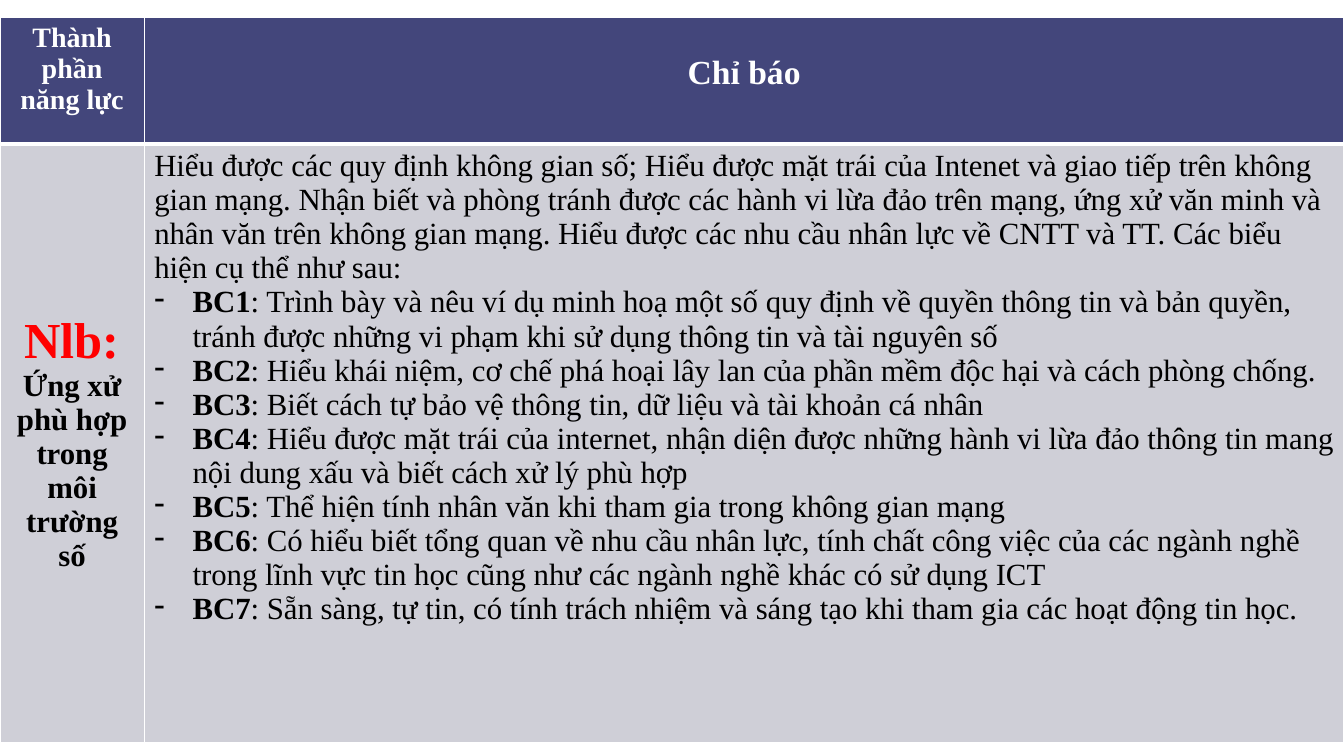
from dataclasses import dataclass

from lxml import etree
from pptx import Presentation
from pptx.dml.color import RGBColor
from pptx.enum.text import MSO_ANCHOR, PP_ALIGN
from pptx.oxml.ns import qn
from pptx.table import _Cell
from pptx.text.text import _Paragraph
from pptx.util import Inches, Pt

CENTER, LEFT = PP_ALIGN.CENTER, PP_ALIGN.LEFT
TOP, MIDDLE = MSO_ANCHOR.TOP, MSO_ANCHOR.MIDDLE


@dataclass(frozen=True)
class Theme:
    font: str = "Times New Roman"
    white: str = "FFFFFF"
    black: str = "000000"
    red: str = "FF0000"
    header_fill: str = "43467B"
    body_fill: str = "CFCFD7"
    label_size: int = 20
    body_size: int = 22
    title_size: int = 24
    code_size: int = 36
    thin: int = 1
    thick: int = 3


@dataclass(frozen=True)
class Indicator:
    code: str
    text: str


T = Theme()
COL_WIDTHS = (1.43, 11.9)
ROW_HEIGHTS = (1.26, 5.94)
HANG = 0.38

INTRO = (
    "Hiểu được các quy định không gian số; Hiểu được mặt trái của Intenet và giao tiếp "
    "trên không gian mạng. Nhận biết và phòng tránh được các hành vi lừa đảo trên mạng, "
    "ứng xử văn minh và nhân văn trên không gian mạng. Hiểu được các nhu cầu nhân lực về "
    "CNTT và TT. Các biểu hiện cụ thể như sau:"
)
INDICATORS = (
    Indicator("BC1", "Trình bày và nêu ví dụ minh hoạ một số quy định về quyền thông tin và "
              "bản quyền, tránh được những vi phạm khi sử dụng thông tin và tài nguyên số"),
    Indicator("BC2", "Hiểu khái niệm, cơ chế phá hoại lây lan của phần mềm độc hại và "
              "cách phòng chống."),
    Indicator("BC3", "Biết cách tự bảo vệ thông tin, dữ liệu và tài khoản cá nhân"),
    Indicator("BC4", "Hiểu được mặt trái của internet, nhận diện được những hành vi lừa đảo "
              "thông tin mang nội dung xấu và biết cách xử lý phù hợp"),
    Indicator("BC5", "Thể hiện tính nhân văn khi tham gia trong không gian mạng"),
    Indicator("BC6", "Có hiểu biết tổng quan về nhu cầu nhân lực, tính chất công việc của các "
              "ngành nghề trong lĩnh vực tin học cũng như các ngành nghề khác có sử dụng ICT"),
    Indicator("BC7", "Sẵn sàng, tự tin, có tính trách nhiệm và sáng tạo khi tham gia các "
              "hoạt động tin học."),
)


def add_text(p: _Paragraph, text: str, *, size: int = T.body_size, color: str = T.black,
             bold: bool = False, align: PP_ALIGN = LEFT) -> None:
    """Append a formatted run to a paragraph."""
    p.alignment = align
    r = p.add_run()
    r.text = text
    r.font.name = T.font
    r.font.size = Pt(size)
    r.font.bold = bold
    r.font.color.rgb = RGBColor.from_string(color)


def add_dash(p: _Paragraph) -> None:
    """Give a paragraph a dash bullet with a hanging indent."""
    pPr = p._p.get_or_add_pPr()
    pPr.set("marL", str(Inches(HANG)))
    pPr.set("indent", str(Inches(-HANG)))
    etree.SubElement(pPr, qn("a:buChar"), char="-")


def style_cell(cell: _Cell, fill: str, top: int, bottom: int,
               anchor: MSO_ANCHOR = TOP) -> None:
    """Set the borders, fill and anchor of a cell."""
    tcPr = cell._tc.get_or_add_tcPr()
    for side, width in (("L", T.thin), ("R", T.thin), ("T", top), ("B", bottom)):
        ln = etree.SubElement(tcPr, qn(f"a:ln{side}"), w=str(Pt(width)))
        solid = etree.SubElement(ln, qn("a:solidFill"))
        etree.SubElement(solid, qn("a:srgbClr"), val=T.white)
    cell.fill.solid()
    cell.fill.fore_color.rgb = RGBColor.from_string(fill)
    cell.vertical_anchor = anchor


def main() -> None:
    prs = Presentation()
    prs.slide_width, prs.slide_height = Inches(13.33), Inches(7.5)
    s = prs.slides.add_slide(prs.slide_layouts[6])

    # Table grid
    table = s.shapes.add_table(2, 2, Inches(0), Inches(0.17), Inches(sum(COL_WIDTHS)),
                               Inches(sum(ROW_HEIGHTS))).table
    for col, width in zip(table.columns, COL_WIDTHS):
        col.width = Inches(width)
    for row, height in zip(table.rows, ROW_HEIGHTS):
        row.height = Inches(height)
    head_label, head_title = table.rows[0].cells
    skill, details = table.rows[1].cells

    # Header row
    for cell in (head_label, head_title):
        style_cell(cell, T.header_fill, T.thin, T.thick)
    add_text(head_label.text_frame.paragraphs[0], "Thành phần năng lực",
             size=T.label_size, color=T.white, bold=True, align=CENTER)
    head_title.margin_top = Inches(0.37)
    add_text(head_title.text_frame.paragraphs[0], "Chỉ báo",
             size=T.title_size, color=T.white, bold=True, align=CENTER)

    # Competency name
    style_cell(skill, T.body_fill, T.thick, T.thin, MIDDLE)
    tf = skill.text_frame
    add_text(tf.paragraphs[0], "Nlb:", size=T.code_size, color=T.red, bold=True, align=CENTER)
    add_text(tf.add_paragraph(), "Ứng xử phù hợp trong môi trường số", bold=True, align=CENTER)

    # Indicators
    style_cell(details, T.body_fill, T.thick, T.thin)
    tf = details.text_frame
    add_text(tf.paragraphs[0], INTRO)
    for item in INDICATORS:
        p = tf.add_paragraph()
        add_dash(p)
        add_text(p, item.code, bold=True)
        add_text(p, f": {item.text}")

    prs.save("out.pptx")


if __name__ == "__main__":
    main()
